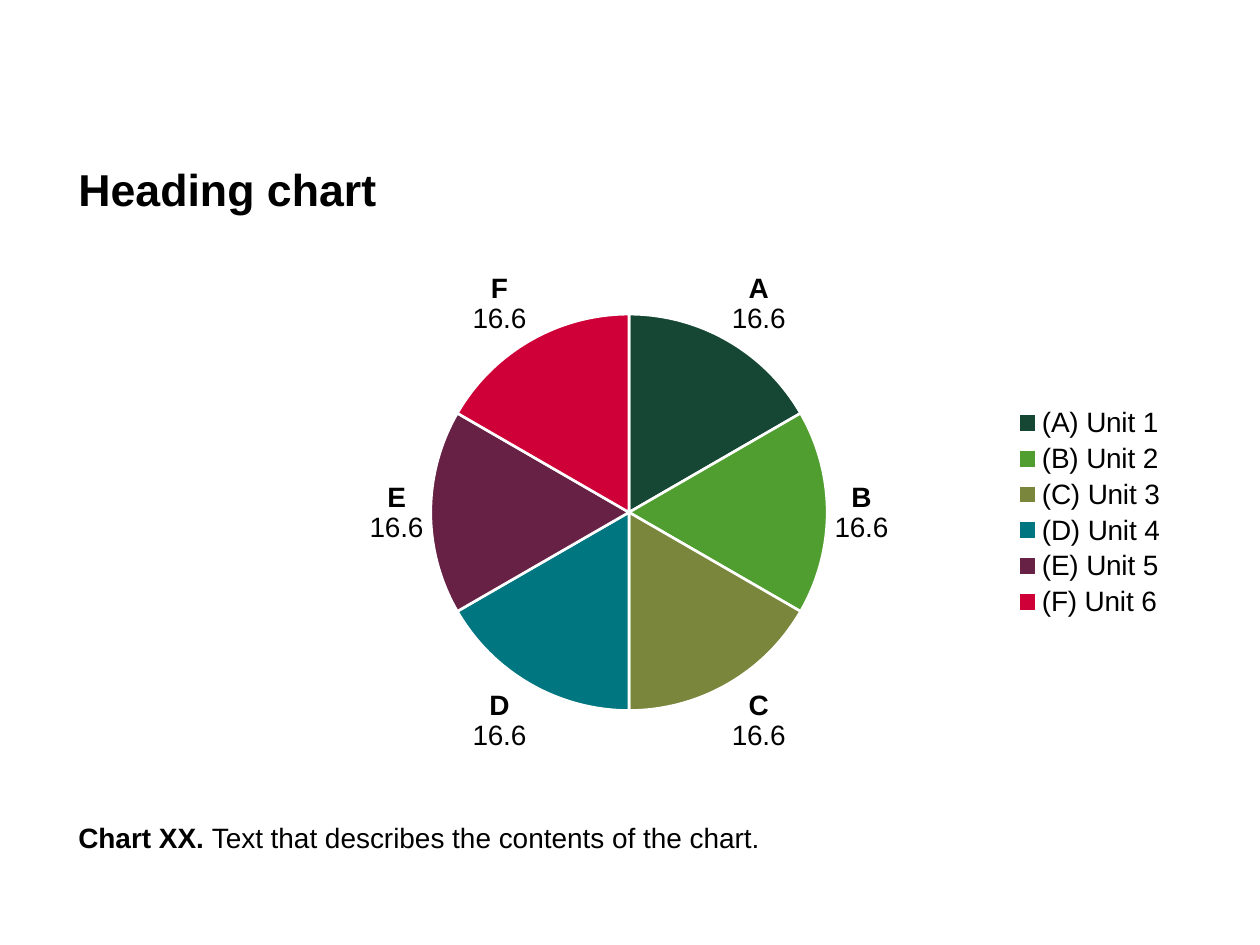
from dataclasses import dataclass

from lxml import etree
from pptx import Presentation
from pptx.chart.data import CategoryChartData
from pptx.dml.color import RGBColor
from pptx.enum.chart import XL_CHART_TYPE, XL_LABEL_POSITION, XL_LEGEND_POSITION
from pptx.enum.text import MSO_ANCHOR
from pptx.oxml.ns import qn
from pptx.util import Cm, Pt

PIE = XL_CHART_TYPE.PIE
OUTSIDE = XL_LABEL_POSITION.OUTSIDE_END
RIGHT = XL_LEGEND_POSITION.RIGHT
TOP, MIDDLE = MSO_ANCHOR.TOP, MSO_ANCHOR.MIDDLE


@dataclass(frozen=True)
class Theme:
    font: str = "Arial"
    text: str = "000000"
    gap: str = "FFFFFF"
    slices: tuple = ("154734", "509E2F", "79863B", "007681", "672145", "CE0037")
    heading: float = 25.5
    heading_line: float = 27
    body: float = 16
    gap_width: float = 1.5


THEME = Theme()
UNITS = "ABCDEF"
SHARE = 16.6


def format_font(font, size=THEME.body, bold=False):
    for name, value in {"name": THEME.font, "size": Pt(size), "bold": bold}.items():
        setattr(font, name, value)
    font.color.rgb = RGBColor.from_string(THEME.text)


def add_run(p, text, **style):
    r = p.add_run()
    r.text = text
    format_font(r.font, **style)


def add_text(s, box, anchor):
    tf = s.shapes.add_textbox(*box).text_frame
    settings = {"word_wrap": True, "vertical_anchor": anchor, "margin_left": 0,
                "margin_right": 0, "margin_top": 0, "margin_bottom": 0}
    for name, value in settings.items():
        setattr(tf, name, value)
    return tf.paragraphs[0]


def add_heading(s, box):
    p = add_text(s, box, TOP)
    p.line_spacing = Pt(THEME.heading_line)
    add_run(p, "Heading chart", size=THEME.heading, bold=True)


def add_caption(s, box):
    p = add_text(s, box, MIDDLE)
    add_run(p, "Chart XX. ", bold=True)
    add_run(p, "Text that describes the contents of the chart.")


def set_plot_layout(chart, **fractions):
    area = chart._chartSpace.find(".//" + qn("c:plotArea"))
    for old in area.findall(qn("c:layout")):
        area.remove(old)
    layout = etree.Element(qn("c:layout"))
    manual = etree.SubElement(layout, qn("c:manualLayout"))
    values = {"layoutTarget": "inner", "xMode": "edge", "yMode": "edge", **fractions}
    for tag, value in values.items():
        etree.SubElement(manual, qn("c:" + tag)).set("val", str(value))
    area.insert(0, layout)


def format_slice(point, letter, color):
    point.format.fill.solid()
    point.format.fill.fore_color.rgb = RGBColor.from_string(color)
    point.format.line.color.rgb = RGBColor.from_string(THEME.gap)
    point.format.line.width = Pt(THEME.gap_width)
    tf = point.data_label.text_frame
    add_run(tf.paragraphs[0], letter, bold=True)
    add_run(tf.add_paragraph(), str(SHARE))
    point.data_label.position = OUTSIDE


def add_pie(s, box):
    data = CategoryChartData(number_format="0.0")
    data.categories = [f"({letter}) Unit {i}" for i, letter in enumerate(UNITS, 1)]
    data.add_series("Series 1", [SHARE] * len(UNITS))
    chart = s.shapes.add_chart(PIE, *box, data).chart
    chart.has_title = False
    format_font(chart.font)
    set_plot_layout(chart, x=0.32, y=0.1, w=0.36, h=0.8)

    chart.has_legend = True
    chart.legend.position = RIGHT
    chart.legend.include_in_layout = False
    format_font(chart.legend.font)

    plot = chart.plots[0]
    plot.vary_by_categories = True
    labels = plot.series[0].data_labels
    labels.show_value = True
    labels.position = OUTSIDE
    format_font(labels.font)
    for i, (letter, color) in enumerate(zip(UNITS, THEME.slices)):
        format_slice(plot.series[0].points[i], letter, color)


def main():
    prs = Presentation()
    prs.slide_width, prs.slide_height = Cm(25.4), Cm(19.05)
    s = prs.slides.add_slide(prs.slide_layouts[6])
    left, width = Cm(1.58), Cm(22.2)
    add_heading(s, (left, Cm(3.4), width, Cm(1.22)))
    add_pie(s, (left, Cm(5.33), width, Cm(10)))
    add_caption(s, (left, Cm(16.03), width, Cm(1.68)))
    prs.save("out.pptx")


if __name__ == "__main__":
    main()
